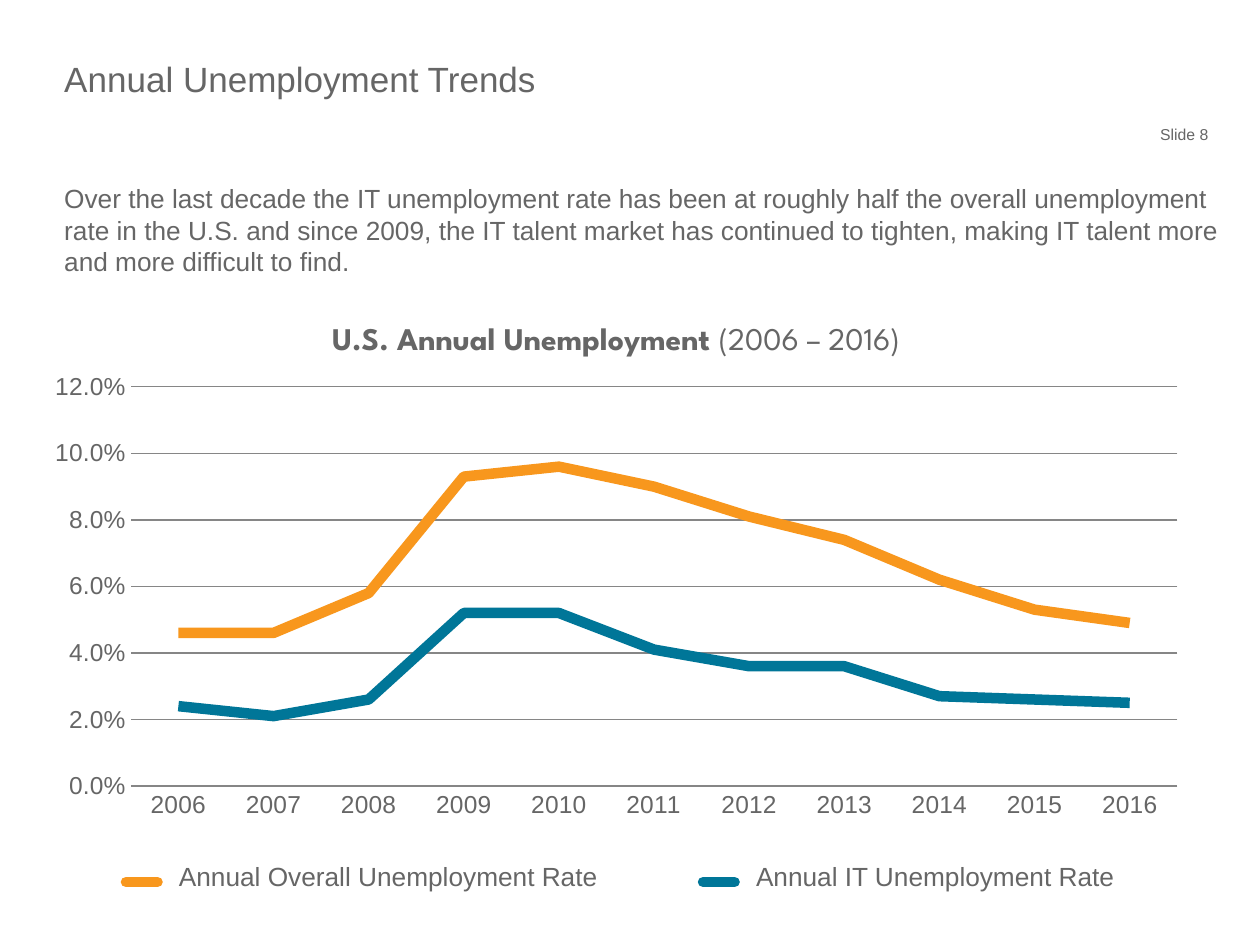
from dataclasses import dataclass

from lxml import etree
from pptx import Presentation
from pptx.chart.data import CategoryChartData
from pptx.dml.color import RGBColor
from pptx.enum.chart import XL_CHART_TYPE, XL_TICK_MARK
from pptx.enum.shapes import MSO_CONNECTOR
from pptx.enum.text import MSO_ANCHOR, PP_ALIGN
from pptx.oxml import parse_xml
from pptx.oxml.ns import nsdecls, qn
from pptx.util import Inches, Pt


@dataclass(frozen=True)
class Theme:
    gray: RGBColor = RGBColor(0x66, 0x66, 0x66)
    grid: RGBColor = RGBColor(0x86, 0x86, 0x86)
    orange: RGBColor = RGBColor(0xF8, 0x97, 0x1D)
    teal: RGBColor = RGBColor(0x00, 0x76, 0x98)
    font: str = "Arial"
    chart_title_font: str = "League Spartan"
    title: Pt = Pt(20)
    chart_title: Pt = Pt(18)
    body: Pt = Pt(15)
    axis: Pt = Pt(14)
    small: Pt = Pt(9)
    rate_line: Pt = Pt(6)
    grid_line: Pt = Pt(0.75)


@dataclass(frozen=True)
class Label:
    text: str
    left: float
    top: float
    width: float
    height: float
    size: Pt
    anchor: MSO_ANCHOR = MSO_ANCHOR.TOP
    align: PP_ALIGN = PP_ALIGN.LEFT


@dataclass(frozen=True)
class Rate:
    name: str
    color: RGBColor
    key_left: float
    percents: tuple


T = Theme()
YEARS = range(2006, 2017)
LEGEND_Y = 7.0

LABELS = [
    Label("Slide 8", 7.22, 0.95, 2.37, 0.23, T.small, MSO_ANCHOR.MIDDLE, PP_ALIGN.RIGHT),
    Label("Annual Unemployment Trends", 0.51, 0, 6.85, 1.25, T.title, MSO_ANCHOR.MIDDLE),
    Label("Over the last decade the IT unemployment rate has been at roughly half "
          "the overall unemployment rate in the U.S. and since 2009, the IT talent "
          "market has continued to tighten, making IT talent more and more "
          "difficult to find.", 0.51, 1.45, 9.23, 0.89, T.body),
]
RATES = [
    Rate("Annual Overall Unemployment Rate", T.orange, 1.0,
         (4.6, 4.6, 5.8, 9.3, 9.6, 9.0, 8.1, 7.4, 6.2, 5.3, 4.9)),
    Rate("Annual IT Unemployment Rate", T.teal, 5.58,
         (2.4, 2.1, 2.6, 5.2, 5.2, 4.1, 3.6, 3.6, 2.7, 2.6, 2.5)),
]


def set_font(font, **extra) -> None:
    for key, value in {"name": T.font, **extra}.items():
        setattr(font, key, value)
    font.color.rgb = T.gray


def set_line(line, color: RGBColor, width: Pt) -> None:
    line.color.rgb = color
    line.width = width


def add_label(s, label: Label) -> None:
    box = map(Inches, (label.left, label.top, label.width, label.height))
    tf = s.shapes.add_textbox(*box).text_frame
    frame = {"word_wrap": True, "vertical_anchor": label.anchor, "margin_left": 0,
             "margin_right": 0, "margin_top": 0, "margin_bottom": 0}
    for key, value in frame.items():
        setattr(tf, key, value)
    p = tf.paragraphs[0]
    p.alignment = label.align
    r = p.add_run()
    r.text = label.text
    set_font(r.font, size=label.size)


def add_legend_entry(s, rate: Rate) -> None:
    y = Inches(LEGEND_Y)
    key = s.shapes.add_connector(MSO_CONNECTOR.STRAIGHT, Inches(rate.key_left), y,
                                 Inches(rate.key_left + 0.25), y)
    set_line(key.line, rate.color, T.rate_line)
    key.line._get_or_add_ln().set("cap", "rnd")
    etree.SubElement(key._element.spPr, qn("a:effectLst"))
    add_label(s, Label(rate.name, rate.key_left + 0.42, LEGEND_Y - 0.17,
                       3.42, 0.33, T.body))


def set_plot_layout(chart, x: float, y: float, w: float, h: float) -> None:
    """Fix the inner plot area, in fractions of the chart."""
    plot_area = chart._chartSpace.chart.plotArea
    for old in plot_area.findall(qn("c:layout")):
        plot_area.remove(old)
    plot_area.insert(0, parse_xml(
        f'<c:layout {nsdecls("c")}><c:manualLayout><c:layoutTarget val="inner"/>'
        '<c:xMode val="edge"/><c:yMode val="edge"/>'
        f'<c:x val="{x}"/><c:y val="{y}"/><c:w val="{w}"/><c:h val="{h}"/>'
        '</c:manualLayout></c:layout>'))


def add_rate_chart(s) -> None:
    data = CategoryChartData(number_format="0.0%")
    data.categories = [str(year) for year in YEARS]
    for rate in RATES:
        data.add_series(rate.name, [round(v / 100, 3) for v in rate.percents])
    chart = s.shapes.add_chart(XL_CHART_TYPE.LINE, Inches(0.25), Inches(2.42),
                               Inches(9.28), Inches(4.17), data).chart
    chart.has_legend = False
    set_font(chart.font, size=T.axis)
    set_plot_layout(chart, 0.085, 0.156, 0.895, 0.76)

    # Chart title
    chart.has_title = True
    chart.chart_title.include_in_layout = False
    p = chart.chart_title.text_frame.paragraphs[0]
    for text, bold in (("U.S. Annual Unemployment ", True), ("(2006 – 2016)", False)):
        r = p.add_run()
        r.text = text
        set_font(r.font, name=T.chart_title_font, size=T.chart_title, bold=bold)

    # Axes
    cat, val = chart.category_axis, chart.value_axis
    for axis in (cat, val):
        axis.major_tick_mark = axis.minor_tick_mark = XL_TICK_MARK.NONE
        set_font(axis.tick_labels.font, size=T.axis)
    scale = {"minimum_scale": 0, "maximum_scale": 0.12, "major_unit": 0.02,
             "has_major_gridlines": True}
    for key, value in scale.items():
        setattr(val, key, value)
    val.tick_labels.number_format = "0.0%"
    val.tick_labels.number_format_is_linked = False
    val.format.line.fill.background()
    for line in (cat.format.line, val.major_gridlines.format.line):
        set_line(line, T.grid, T.grid_line)

    # Series
    plot = chart.plots[0]
    plot.vary_by_categories = False
    for series, rate in zip(plot.series, RATES):
        series.smooth = False
        set_line(series.format.line, rate.color, T.rate_line)
        ln = series.format.line._get_or_add_ln()
        ln.set("cap", "flat")
        etree.SubElement(ln, qn("a:round"))


def main() -> None:
    prs = Presentation()
    prs.slide_width, prs.slide_height = Inches(10), Inches(7.5)
    s = prs.slides.add_slide(prs.slide_layouts[6])

    # Heading and text
    for label in LABELS:
        add_label(s, label)

    # Chart with its legend
    add_rate_chart(s)
    for rate in RATES:
        add_legend_entry(s, rate)

    prs.save("out.pptx")


if __name__ == "__main__":
    main()
